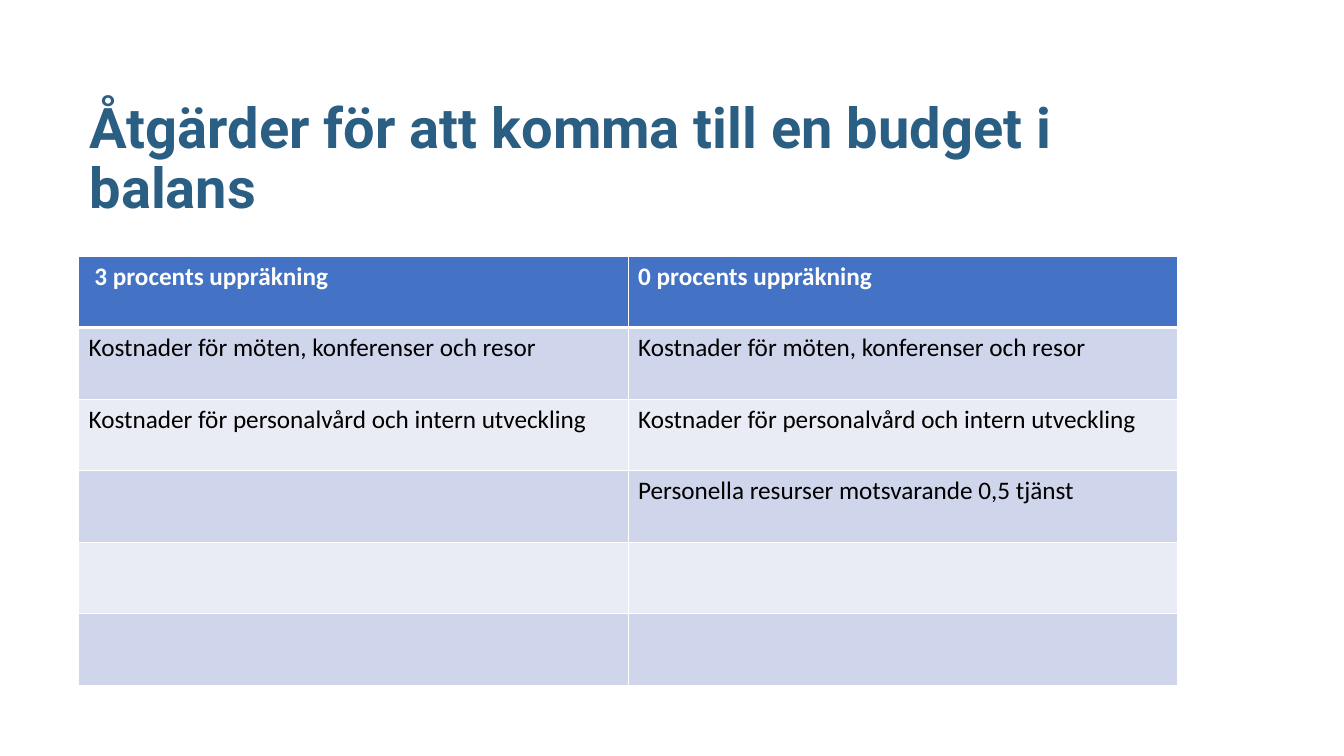
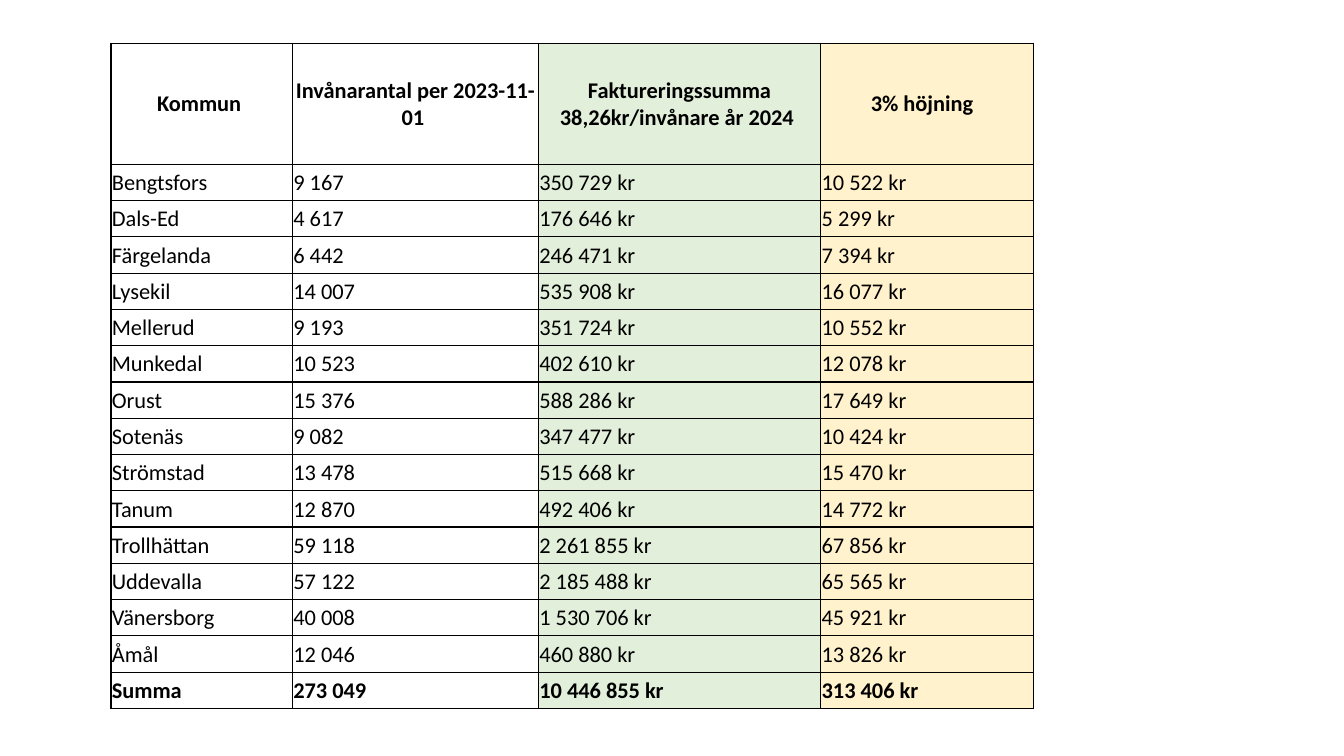
"""Build two budget slides: savings measures and invoicing per municipality."""
from lxml.etree import SubElement
from pptx import Presentation
from pptx.dml.color import RGBColor
from pptx.enum.text import MSO_ANCHOR as ANCHOR, PP_ALIGN as ALIGN
from pptx.oxml.ns import qn
from pptx.util import Inches, Pt

BLUE, TITLE, WHITE, BLACK = "4472C4", "2B5E83", "FFFFFF", "000000"
BANDS = ["CFD5EA", "E9EBF5"]
COLUMN_FILLS = [WHITE, WHITE, "E2EFDA", "FFF2CC"]

HEADING = "Åtgärder för att komma till en budget i balans"
MEETINGS = "Kostnader för möten, konferenser och resor"
STAFF = "Kostnader för personalvård och intern utveckling"
MEASURES = [
    (" 3 procents uppräkning", "0 procents uppräkning"),
    (MEETINGS, MEETINGS),
    (STAFF, STAFF),
    ("", "Personella resurser motsvarande 0,5 tjänst"),
    ("", ""),
    ("", ""),
]
INVOICE_HEADER = ("Kommun ", "Invånarantal per 2023-11-01 ",
                  "Faktureringssumma 38,26kr/invånare år 2024 ", "3% höjning  ")
INVOICES = [
    ("Bengtsfors", 9167, 350729, 10522),
    ("Dals-Ed", 4617, 176646, 5299),
    ("Färgelanda", 6442, 246471, 7394),
    ("Lysekil", 14007, 535908, 16077),
    ("Mellerud", 9193, 351724, 10552),
    ("Munkedal", 10523, 402610, 12078),
    ("Orust", 15376, 588286, 17649),
    ("Sotenäs", 9082, 347477, 10424),
    ("Strömstad", 13478, 515668, 15470),
    ("Tanum", 12870, 492406, 14772),
    ("Trollhättan", 59118, 2261855, 67856),
    ("Uddevalla", 57122, 2185488, 65565),
    ("Vänersborg", 40008, 1530706, 45921),
    ("Åmål", 12046, 460880, 13826),
    ("Summa", 273049, 10446855, 313406),
]


def rgb(color):
    return RGBColor.from_string(color)


def number(n):
    return f"{n:,}".replace(",", " ")


def style(p, font, size, color, bold):
    for r in p.runs:
        r.font.name, r.font.size, r.font.bold = font, Pt(size), bold
        r.font.color.rgb = rgb(color)


def add_title(s, text):
    box = s.shapes.add_textbox(Inches(0.79), Inches(0.91), Inches(9.83), Inches(1.33))
    tf = box.text_frame
    tf.word_wrap = True
    tf.vertical_anchor = ANCHOR.BOTTOM
    tf.text = text
    p = tf.paragraphs[0]
    p.line_spacing = 0.9
    style(p, "Roboto", 40, TITLE, True)


def add_grid(s, left, top, widths, heights):
    shape = s.shapes.add_table(len(heights), len(widths), Inches(left), Inches(top),
                               Inches(sum(widths)), Inches(sum(heights)))
    table = shape.table
    table.first_row = table.horz_banding = False
    for column, width in zip(table.columns, widths):
        column.width = Inches(width)
    for row, height in zip(table.rows, heights):
        row.height = Inches(height)
    return table


def fill_cell(cell, text, fill, line, size, color, bold, top=1, bottom=1):
    tc_pr = cell._tc.get_or_add_tcPr()
    for side, width in (("L", 1), ("R", 1), ("T", top), ("B", bottom)):
        ln = SubElement(tc_pr, qn(f"a:ln{side}"), w=str(Pt(width)))
        SubElement(SubElement(ln, qn("a:solidFill")), qn("a:srgbClr"), val=line)
    cell.fill.solid()
    cell.fill.fore_color.rgb = rgb(fill)
    cell.text_frame.text = text
    style(cell.text_frame.paragraphs[0], "Calibri", size, color, bold)


def add_measures(s):
    table = add_grid(s, 0.78, 2.54, [5.45] * 2, [0.71] * len(MEASURES))
    for i, row in enumerate(MEASURES):
        header = i == 0
        fill = BLUE if header else BANDS[(i - 1) % 2]
        for j, text in enumerate(row):
            fill_cell(table.cell(i, j), text, fill, WHITE, 18,
                      WHITE if header else BLACK, header,
                      top=3 if i == 1 else 1, bottom=3 if header else 1)


def add_invoices(s):
    rows = [INVOICE_HEADER] + [
        (name, number(people), f"{number(total)} kr", f"{number(rise)} kr")
        for name, people, total, rise in INVOICES]
    table = add_grid(s, 1.1, 0.43, [1.8, 2.44, 2.8, 2.11], [1.2] + [0.36] * len(INVOICES))
    for i, row in enumerate(rows):
        for j, text in enumerate(row):
            cell = table.cell(i, j)
            fill_cell(cell, text, COLUMN_FILLS[j], BLACK, 16, BLACK,
                      i in (0, len(rows) - 1))
            cell.margin_left = cell.margin_right = cell.margin_top = Inches(0.01)
            cell.margin_bottom = 0
            cell.vertical_anchor = ANCHOR.MIDDLE
            if i == 0:
                cell.text_frame.paragraphs[0].alignment = ALIGN.CENTER


def main():
    prs = Presentation()
    prs.slide_width, prs.slide_height = Inches(13.33), Inches(7.5)
    blank = prs.slide_layouts[6]
    s = prs.slides.add_slide(blank)
    add_title(s, HEADING)
    add_measures(s)
    add_invoices(prs.slides.add_slide(blank))
    prs.save("out.pptx")


if __name__ == "__main__":
    main()
